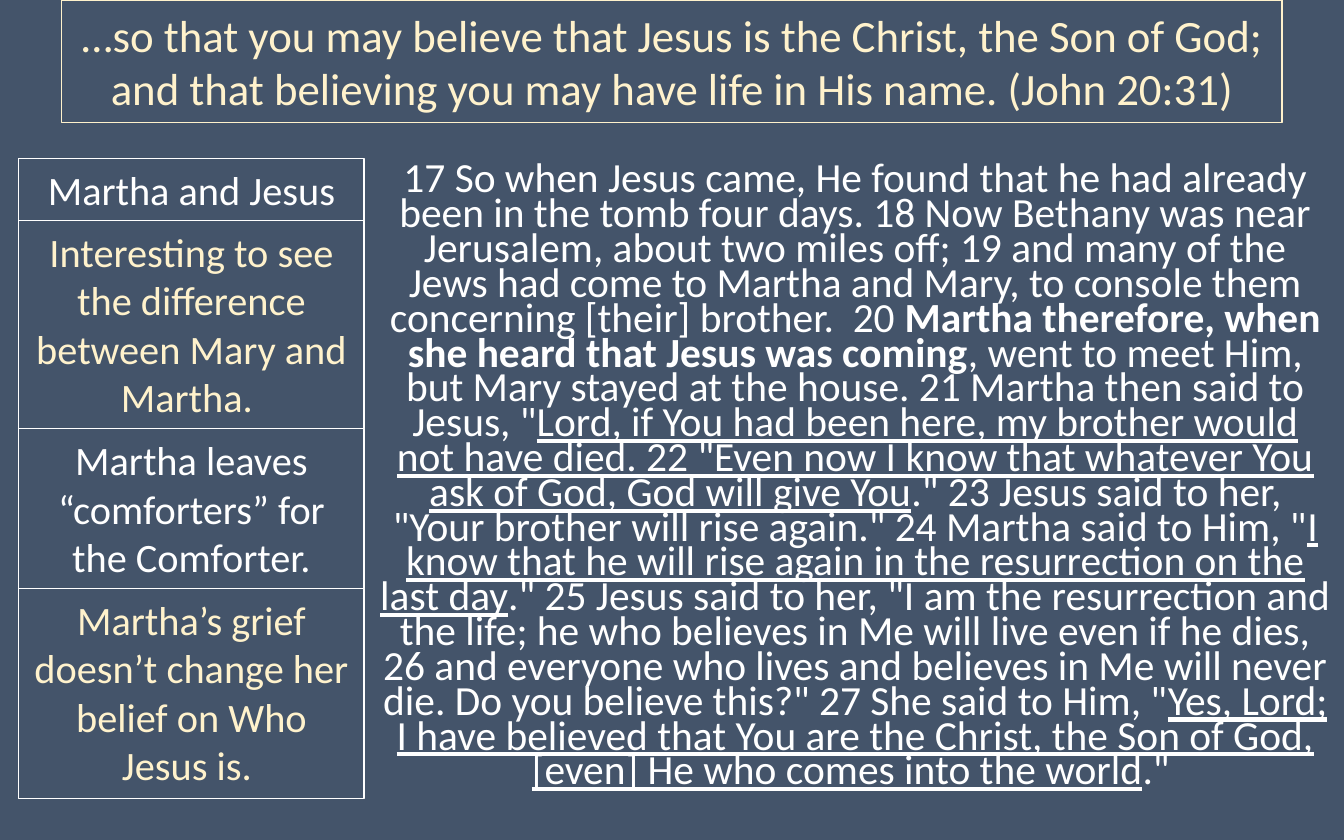
from pptx import Presentation
from pptx import util as u
from pptx.dml.color import RGBColor
from pptx.enum import shapes, text

PX = 9144  # 100 px to the inch
CREAM, WHITE, SLATE = "FFF2CC", "FFFFFF", "44546A"


def color(fmt, value):
    fmt.rgb = RGBColor.from_string(value)


def write(p, content, size, value, **styles):
    r = p.add_run()
    r.text = content
    for name, v in {"name": "Calibri", "size": u.Pt(size), **styles}.items():
        setattr(r.font, name, v)
    color(r.font.color, value)


prs = Presentation()
prs.slide_width, prs.slide_height = 1000 * PX, 625 * PX
s = prs.slides.add_slide(prs.slide_layouts[6])
s.background.fill.solid()
color(s.background.fill.fore_color, SLATE)

# Scripture passage: text with its emphasis
passage = [
    ("17 So when Jesus came, He found that he had already been in the tomb four days. "
     "18 Now Bethany was near Jerusalem, about two miles off; 19 and many of the Jews "
     "had come to Martha and Mary, to console them concerning [their] brother.  20 ", {}),
    ("Martha therefore, when she heard that Jesus was coming", {"bold": True}),
    (", went to meet Him, but Mary stayed at the house. 21 Martha then said to Jesus, \"", {}),
    ("Lord, if You had been here, my brother would not have died. 22 \"Even now I know "
     "that whatever You ask of God, God will give You", {"underline": True}),
    (".\" 23 Jesus said to her, \"Your brother will rise again.\" 24 Martha said to Him, \"", {}),
    ("I know that he will rise again in the resurrection on the last day", {"underline": True}),
    (".\" 25 Jesus said to her, \"I am the resurrection and the life; he who believes in Me "
     "will live even if he dies, 26 and everyone who lives and believes in Me will never die. "
     "Do you believe this?\" 27 She said to Him, \"", {}),
    ("Yes, Lord; I have believed that You are the Christ, the Son of God, [even] He who "
     "comes into the world", {"underline": True}),
    (".\" ", {}),
]
tf = s.shapes.add_textbox(273 * PX, 118 * PX, 727 * PX, 507 * PX).text_frame
tf.word_wrap = True
p = tf.paragraphs[0]
paragraph_format = {"alignment": text.PP_ALIGN.CENTER, "line_spacing": 0.7,
                    "space_before": u.Pt(7.5)}
for name, v in paragraph_format.items():
    setattr(p, name, v)
for content, styles in passage:
    write(p, content, 22.2, WHITE, **styles)

# Outlined boxes: the key verse, then the notes stacked on the left
TOP, MIDDLE = text.MSO_ANCHOR.TOP, text.MSO_ANCHOR.MIDDLE
boxes = [((46, 0, 908, 91), "…so that you may believe that Jesus is the Christ, the Son of God; "
          "and that believing you may have life in His name. (John 20:31)", 24, CREAM, CREAM, MIDDLE)]
notes = [
    (46, "Martha and Jesus", WHITE),
    (155, "Interesting to see the difference between Mary and Martha. ", CREAM),
    (119, "Martha leaves “comforters” for the Comforter.", WHITE),
    (156, "Martha’s grief doesn’t change her belief on Who Jesus is. ", CREAM),
]
top = 118
for height, content, value in notes:
    boxes.append(((14, top, 257, height), content, 21.6, value, WHITE, TOP))
    top += height

for place, content, size, value, outline, anchor in boxes:
    sp = s.shapes.add_shape(shapes.MSO_SHAPE.RECTANGLE, *(n * PX for n in place))
    sp.shadow.inherit = False
    sp.fill.background()
    color(sp.line.color, outline)
    sp.line.width = u.Pt(0.75)
    tf = sp.text_frame
    frame_format = {"word_wrap": True, "vertical_anchor": anchor,
                    "auto_size": text.MSO_AUTO_SIZE.SHAPE_TO_FIT_TEXT}
    for name, v in frame_format.items():
        setattr(tf, name, v)
    p = tf.paragraphs[0]
    p.alignment = text.PP_ALIGN.CENTER
    write(p, content, size, value)

prs.save("out.pptx")
